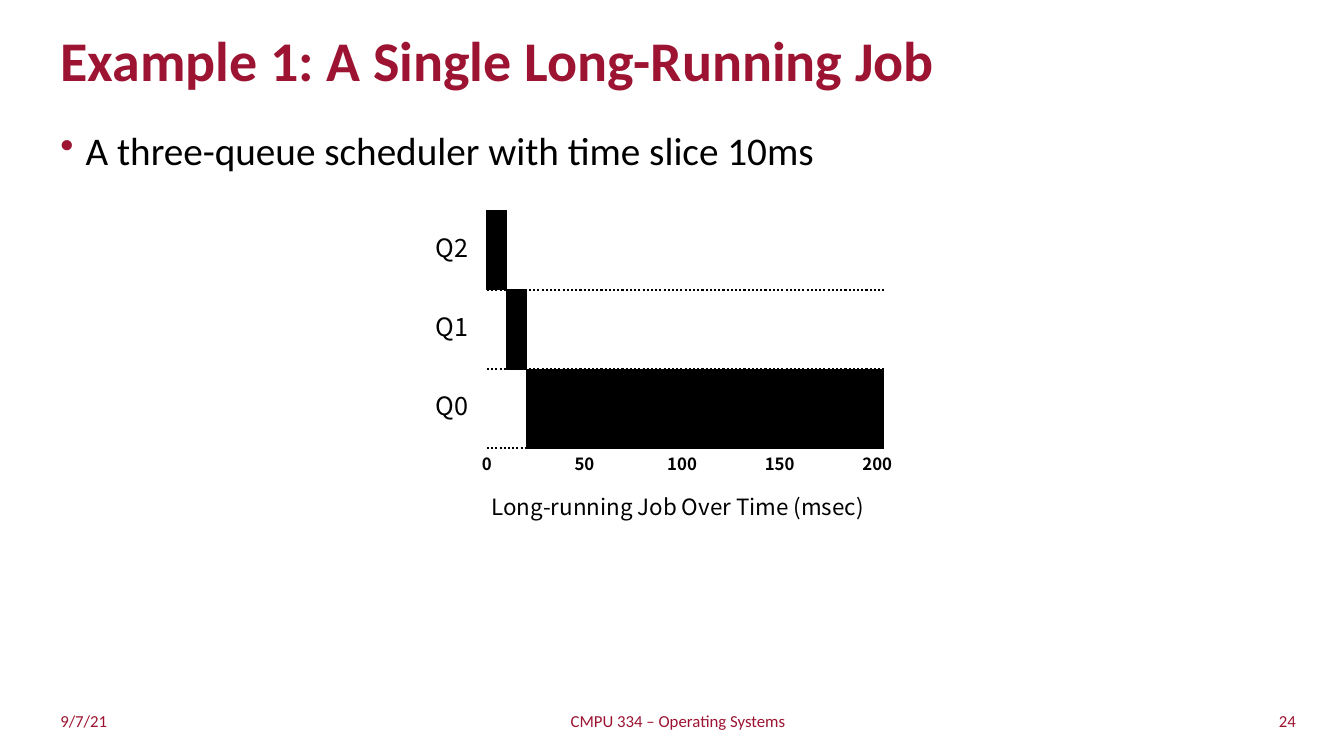
from lxml.etree import SubElement
from pptx import Presentation
from pptx.dml.color import RGBColor
from pptx.enum.dml import MSO_LINE
from pptx.enum.shapes import MSO_CONNECTOR as Connector, MSO_SHAPE as Shape
from pptx.enum.text import MSO_ANCHOR as Anchor, MSO_AUTO_SIZE as AutoSize, PP_ALIGN as Align
from pptx.oxml.ns import qn
from pptx.util import Cm, Pt

COLORS = {"maroon": "9C1431", "black": "000000"}
BODY_FONT, CHART_FONT = "Calibri", "Noto Sans CJK KR"

# Queue, start and end of the job's stay in it (msec), from top to bottom
STAYS = [("Q2", 0, 10), ("Q1", 10, 20), ("Q0", 20, 200)]
TIMES = range(0, 201, 50)


def color(name):
    return RGBColor.from_string(COLORS[name])


def style(paragraph, size, font, color_name, bold=False):
    paragraph.font.size = Pt(size)
    paragraph.font.name = font
    paragraph.font.bold = bold
    paragraph.font.color.rgb = color(color_name)


def add_text(slide, box, text, size, font, color_name="black", bold=False,
             align=Align.CENTER, anchor=Anchor.TOP):
    frame = slide.shapes.add_textbox(*map(Cm, box)).text_frame
    frame.word_wrap = True
    frame.vertical_anchor = anchor
    paragraph = frame.paragraphs[0]
    paragraph.text = text
    paragraph.alignment = align
    style(paragraph, size, font, color_name, bold)
    return paragraph


def place_title(slide, box):
    title = slide.shapes.title
    title.left, title.top, title.width, title.height = map(Cm, box)
    frame = title.text_frame
    frame.text = "Example 1: A Single Long-Running Job"
    frame.auto_size = AutoSize.NONE
    frame.vertical_anchor = Anchor.MIDDLE
    heading = frame.paragraphs[0]
    heading.alignment = Align.LEFT
    heading.line_spacing = 0.9
    style(heading, 40, BODY_FONT, "maroon", bold=True)


def add_body(slide, box):
    point = add_text(slide, box, "A three-queue scheduler with time slice 10ms",
                     28, BODY_FONT, align=Align.LEFT)
    point.line_spacing = 0.9
    # Maroon bullet with a hanging indent, placed ahead of the font properties
    props = point._p.get_or_add_pPr()
    props.set("marL", str(Cm(0.64)))
    props.set("indent", str(-Cm(0.64)))
    bullet_color = props.makeelement(qn("a:buClr"), {})
    SubElement(bullet_color, qn("a:srgbClr"), val=COLORS["maroon"])
    bullet = props.makeelement(qn("a:buChar"), {"char": "•"})
    defaults = props.find(qn("a:defRPr"))
    defaults.addprevious(bullet_color)
    defaults.addprevious(bullet)


def add_dotted_line(slide, left, y, width):
    line = slide.shapes.add_connector(
        Connector.STRAIGHT, Cm(left), Cm(y), Cm(left + width), Cm(y))
    line.line.color.rgb = color("black")
    line.line.width = Pt(1.5)
    line.line.dash_style = MSO_LINE.ROUND_DOT
    SubElement(line._element.spPr, qn("a:effectLst"))


def add_stay(slide, box):
    stay = slide.shapes.add_shape(Shape.RECTANGLE, *map(Cm, box))
    stay.shadow.inherit = False
    stay.fill.solid()
    stay.fill.fore_color.rgb = color("black")
    stay.line.color.rgb = color("black")
    stay.line.width = Pt(0.75)


def add_timeline(slide, box):
    left, top, width, height = box
    row = height / len(STAYS)
    per_msec = width / TIMES[-1]

    # One row per queue: base line, time in the queue, queue name
    for index, (queue, start, end) in enumerate(STAYS):
        y = top + index * row
        add_dotted_line(slide, left, y + row, width)
        add_stay(slide, (left + start * per_msec, y, (end - start) * per_msec, row))
        add_text(slide, (left - 1.75, y + 0.42, 1.75, 1.02), queue, 18, CHART_FONT)

    # Time axis, a little narrower than the rows
    tick_gap, tick_width = 2.46, 1.55
    for index, time in enumerate(TIMES):
        x = left + index * tick_gap - tick_width / 2
        add_text(slide, (x, top + height, tick_width, 0.76), str(time), 12,
                 CHART_FONT, bold=True)

    add_text(slide, (left - 1.04, top + height + 1, 11.7, 0.94),
             "Long-running Job Over Time (msec)", 16, CHART_FONT)


def add_footer(slide, box):
    left, top, width, height = box
    parts = [("9/7/21", 0, 9.55, Align.LEFT),
             ("CMPU 334 – Operating Systems", (width - 11.43) / 2, 11.43, Align.CENTER),
             ("24", width - 9.55, 9.55, Align.RIGHT)]
    for text, offset, part_width, align in parts:
        add_text(slide, (left + offset, top, part_width, height), text, 12,
                 BODY_FONT, "maroon", align=align, anchor=Anchor.MIDDLE)


def main():
    deck = Presentation()
    deck.slide_width, deck.slide_height = Cm(33.87), Cm(19.05)
    slide = deck.slides.add_slide(deck.slide_layouts[5])
    place_title(slide, (1.27, 0.64, 29.08, 1.9))
    add_body(slide, (1.27, 3.18, 31.32, 13.84))
    add_timeline(slide, (12.27, 5.3, 10, 6))
    add_footer(slide, (1.27, 17.65, 31.64, 1.02))
    deck.save("out.pptx")


if __name__ == "__main__":
    main()
